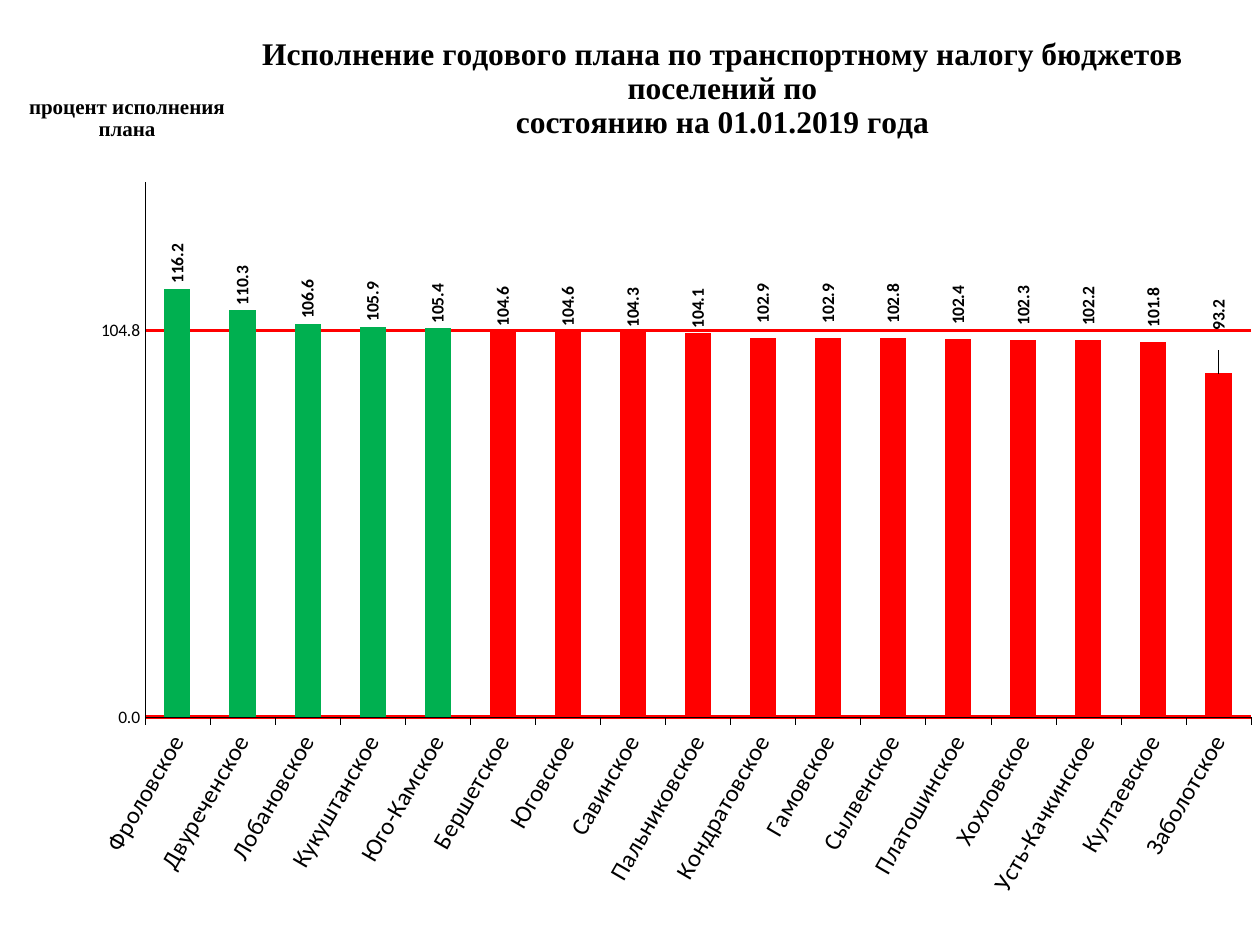
from copy import deepcopy

from pptx import Presentation
from pptx import util as u
from pptx.chart.data import CategoryChartData
from pptx.dml.color import RGBColor
from pptx.enum import chart as c
from pptx.enum import text
from pptx.oxml import parse_xml
from pptx.oxml.ns import nsdecls, qn

BLACK = RGBColor(0x00, 0x00, 0x00)
GREEN = RGBColor(0x00, 0xB0, 0x50)
RED = RGBColor(0xFF, 0x00, 0x00)

PLAN_LEVEL = 104.8
RESULTS = {
    "Фроловское": 116.2, "Двуреченское": 110.3, "Лобановское": 106.6,
    "Кукуштанское": 105.9, "Юго-Камское": 105.4, "Бершетское": 104.6,
    "Юговское": 104.6, "Савинское": 104.3, "Пальниковское": 104.1,
    "Кондратовское": 102.9, "Гамовское": 102.9, "Сылвенское": 102.8,
    "Платошинское": 102.4, "Хохловское": 102.3, "Усть-Качкинское": 102.2,
    "Култаевское": 101.8, "Заболотское": 93.2,
}
CENTER, RIGHT = text.PP_ALIGN.CENTER, text.PP_ALIGN.RIGHT
TITLE_LINES = [
    ("Исполнение годового плана по транспортному налогу бюджетов", CENTER),
    ("поселений по", RIGHT),
    ("состоянию на 01.01.2019 года", CENTER),
]
AXIS_TITLE_LINES = [("процент исполнения", CENTER), ("плана", CENTER)]


def make_layout(x, y, width=None, height=None):
    """Return a manual layout in fractions of the chart or offsets of a label."""
    values = {"x": x, "y": y}
    modes = ""
    if width:
        values.update(w=width, h=height)
        modes = '<c:layoutTarget val="inner"/>'
    if width or x:
        modes += '<c:xMode val="edge"/><c:yMode val="edge"/>'
    parts = "".join(f'<c:{name} val="{value}"/>' for name, value in values.items())
    return parse_xml(f'<c:layout {nsdecls("c")}><c:manualLayout>{modes}{parts}'
                     '</c:manualLayout></c:layout>')


def replace_layout(parent, index, layout):
    """Put a layout into a chart element in place of any existing one."""
    for existing in parent.findall(qn("c:layout")):
        parent.remove(existing)
    parent.insert(index, layout)


def rotate_text(element, degrees):
    """Turn the text of a chart element."""
    body = next(element.iter(qn("a:bodyPr")))
    body.set("rot", str(degrees * 60000))
    body.set("vert", "horz")


def format_font(font, size, bold=False, name="Calibri"):
    """Apply a black font."""
    font.name, font.size, font.bold = name, u.Pt(size), bold
    font.color.rgb = BLACK


def write_title(title, lines, size, x, y):
    """Write an aligned multi-line chart or axis title at a fixed place."""
    frame = title.text_frame
    for index, (line, alignment) in enumerate(lines):
        paragraph = frame.paragraphs[0] if index == 0 else frame.add_paragraph()
        paragraph.text = line
        paragraph.alignment = alignment
        format_font(paragraph.runs[0].font, size, True, "Times New Roman")
    rotate_text(title._element, 0)
    replace_layout(title._element, 1, make_layout(x, y))


def format_axes(chart):
    """Format both axes and the red plan line."""
    category_axis, value_axis = chart.category_axis, chart.value_axis
    for axis, size in ((category_axis, 14), (value_axis, 10)):
        format_font(axis.tick_labels.font, size)
        axis.format.line.color.rgb = BLACK
        axis.format.line.width = u.Pt(0.25)
    category_axis.tick_label_position = c.XL_TICK_LABEL_POSITION.LOW
    category_axis.major_tick_mark = c.XL_TICK_MARK.OUTSIDE
    category_axis.has_major_gridlines = False
    rotate_text(category_axis._element.find(qn("c:txPr")), -60)

    value_axis.minimum_scale, value_axis.maximum_scale = 0, 145
    value_axis.major_unit = PLAN_LEVEL
    value_axis.major_tick_mark = c.XL_TICK_MARK.NONE
    value_axis.tick_labels.number_format = "0.0"
    value_axis.tick_labels.number_format_is_linked = False
    value_axis.major_gridlines.format.line.color.rgb = RED
    value_axis.major_gridlines.format.line.width = u.Pt(2)
    write_title(value_axis.axis_title, AXIS_TITLE_LINES, 12, 0.02, 0.095)


def format_labels(plot):
    """Show upright values and raise those that would cross the plan line."""
    labels = plot.series[0].data_labels
    labels.show_value = True
    labels.number_format = "#,##0.0"
    labels.number_format_is_linked = False
    labels.position = c.XL_LABEL_POSITION.OUTSIDE_END
    format_font(labels.font, 10, True)
    element = labels._element
    rotate_text(element, -90)
    shared = [child for child in element if child.tag != qn("c:showLeaderLines")]
    raised = [index for index, value in enumerate(RESULTS.values()) if value < 103]
    for position, index in enumerate(raised):
        lift = -0.04 if index == len(RESULTS) - 1 else -0.01
        label = parse_xml(f'<c:dLbl {nsdecls("c")}><c:idx val="{index}"/></c:dLbl>')
        label.append(make_layout(0, lift))
        label.extend(deepcopy(child) for child in shared)
        element.insert(position, label)


def add_tax_chart(slide, left, top, width, height):
    """Add the column chart of plan execution in the given box."""
    data = CategoryChartData(number_format="0.0")
    data.categories = list(RESULTS)
    data.add_series("Series 1", list(RESULTS.values()))
    chart = slide.shapes.add_chart(
        c.XL_CHART_TYPE.COLUMN_CLUSTERED, left, top, width, height, data).chart
    chart.has_legend = False
    format_font(chart.font, 10)
    write_title(chart.chart_title, TITLE_LINES, 18, 0.205, 0.033)
    chart.chart_title.include_in_layout = False

    plot = chart.plots[0]
    plot.gap_width = 150
    plot.vary_by_categories = False
    series = plot.series[0]
    series.invert_if_negative = False
    series.format.fill.solid()
    series.format.fill.fore_color.rgb = GREEN
    for index, value in enumerate(RESULTS.values()):
        fill = series.points[index].format.fill
        fill.solid()
        fill.fore_color.rgb = GREEN if value >= PLAN_LEVEL else RED
    format_labels(plot)
    format_axes(chart)
    plot_area = next(chart._chartSpace.iter(qn("c:plotArea")))
    replace_layout(plot_area, 0, make_layout(0.115, 0.193, 0.878, 0.566))


def main():
    """Build and save the presentation."""
    presentation = Presentation()
    presentation.slide_width, presentation.slide_height = u.Cm(25.4), u.Cm(19.05)
    slide = presentation.slides.add_slide(presentation.slide_layouts[6])
    add_tax_chart(slide, u.Cm(0), u.Cm(0), u.Cm(25.4), u.Cm(19.05))
    presentation.save("out.pptx")


if __name__ == "__main__":
    main()
